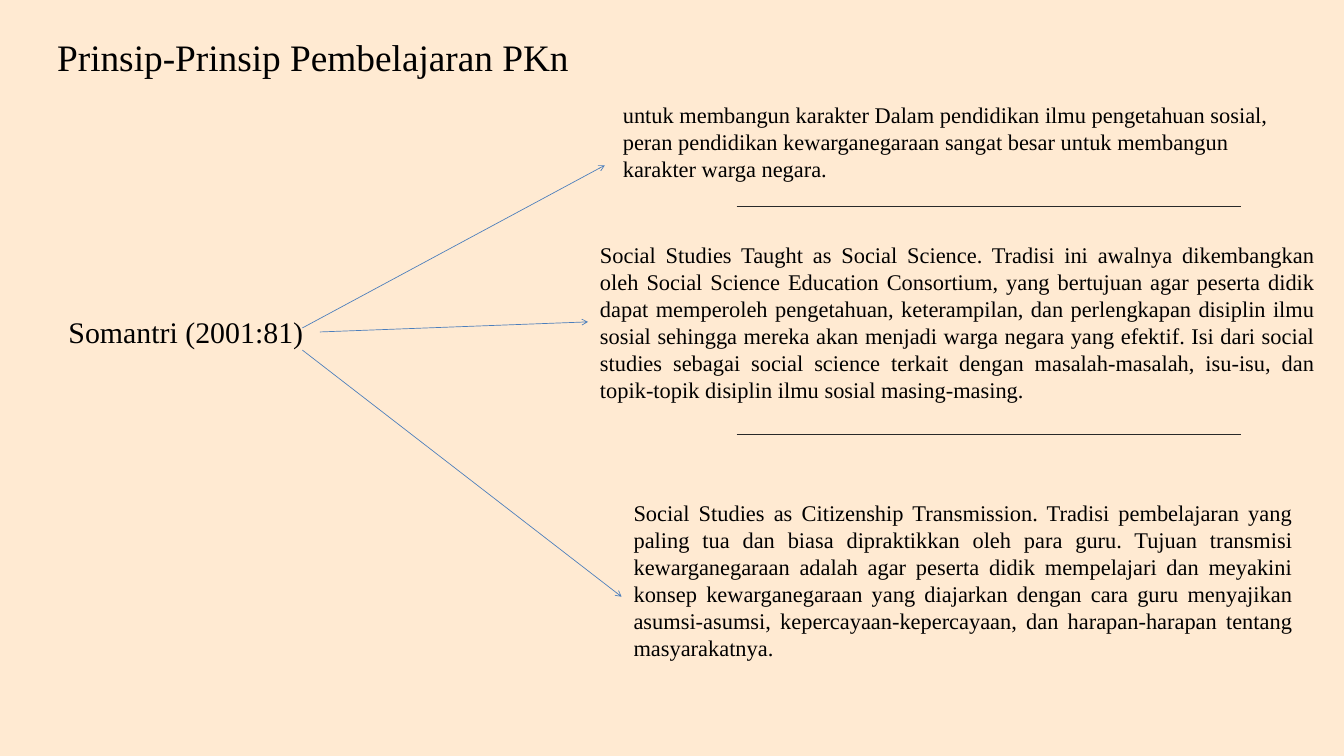
from dataclasses import dataclass

from lxml.etree import SubElement
from pptx import Presentation
from pptx.dml.color import RGBColor
from pptx.enum.shapes import MSO_CONNECTOR as Conn
from pptx.enum.text import MSO_ANCHOR as Anchor, MSO_AUTO_SIZE as Auto, PP_ALIGN as Align
from pptx.oxml.ns import qn
from pptx.util import Emu, Pt


@dataclass(frozen=True)
class Theme:
    """Colours, font and type sizes of the slide."""
    paper: str = "FFEAD2"
    ink: str = "000000"
    rule: str = "292929"
    arrow: str = "4B7EBC"
    font: str = "Times New Roman"
    title: int = 40
    source: int = 32
    body: int = 24


THEME = Theme()
PX = 9144
WIDTH, HEIGHT = 2000, 1125

TITLE = "Prinsip-Prinsip Pembelajaran PKn"
SOURCE = "Somantri (2001:81)"
PRINCIPLES = [
    ((917, 146, 1000, 131), Align.LEFT,
     "untuk membangun karakter Dalam pendidikan ilmu pengetahuan sosial, peran "
     "pendidikan kewarganegaraan sangat besar untuk membangun karakter warga negara."),
    ((883, 354, 1083, 252), Align.JUSTIFY,
     "Social Studies Taught as Social Science. Tradisi ini awalnya dikembangkan oleh "
     "Social Science Education Consortium, yang bertujuan agar peserta didik dapat "
     "memperoleh pengetahuan, keterampilan, dan perlengkapan disiplin ilmu sosial "
     "sehingga mereka akan menjadi warga negara yang efektif. Isi dari social studies "
     "sebagai social science terkait dengan masalah-masalah, isu-isu, dan topik-topik "
     "disiplin ilmu sosial masing-masing."),
    ((933, 738, 1000, 252), Align.JUSTIFY,
     "Social Studies as Citizenship Transmission. Tradisi pembelajaran yang paling tua "
     "dan biasa dipraktikkan oleh para guru. Tujuan transmisi kewarganegaraan adalah "
     "agar peserta didik mempelajari dan meyakini konsep kewarganegaraan yang diajarkan "
     "dengan cara guru menyajikan asumsi-asumsi, kepercayaan-kepercayaan, dan "
     "harapan-harapan tentang masyarakatnya."),
]


def px(*values):
    """Turn px lengths into EMU."""
    return [Emu(v * PX) for v in values]


def set_all(obj, values):
    """Set each named attribute of an object."""
    for name, value in values.items():
        setattr(obj, name, value)


def write(s, text, size, align=Align.LEFT, wrap=True):
    """Fill a shape with one formatted paragraph."""
    tf = s.text_frame
    set_all(tf, {"word_wrap": wrap, "auto_size": Auto.NONE, "vertical_anchor": Anchor.TOP})
    p = tf.paragraphs[0]
    set_all(p, {"alignment": align, "line_spacing": 1.0})
    r = p.add_run()
    r.text = text
    set_all(r.font, {"name": THEME.font, "size": Pt(size)})
    r.font.color.rgb = RGBColor.from_string(THEME.ink)


def add_line(slide, start, end, color, width, arrow=False):
    """Draw a straight line, with an open arrowhead at its end if asked."""
    s = slide.shapes.add_connector(Conn.STRAIGHT, *px(*start, *end))
    s.line.color.rgb = RGBColor.from_string(color)
    s.line.width = Pt(width)
    if arrow:
        SubElement(s.line._get_or_add_ln(), qn("a:tailEnd"), type="arrow")
    SubElement(s._element.spPr, qn("a:effectLst"))


def add_title(slide, box):
    """Place the slide title in its placeholder."""
    s = slide.shapes.title
    set_all(s, dict(zip(("left", "top", "width", "height"), px(*box))))
    write(s, TITLE, THEME.title, wrap=False)


def add_source(slide, box):
    """Place the cited author and the arrows that fan out to the principles."""
    x, y, w, h = box
    write(slide.shapes.add_textbox(*px(*box)), SOURCE, THEME.source, wrap=False)
    fan = [
        ((w - 26, 26), (w + 424, -216)),
        ((w, 32), (w + 399, 17)),
        ((w - 26, 59), (w + 449, 426)),
    ]
    for (x1, y1), (x2, y2) in fan:
        add_line(slide, (x + x1, y + y1), (x + x2, y + y2), THEME.arrow, 0.75, arrow=True)


def add_principles(slide, box):
    """Place the principle texts and the rules at the box's top and bottom."""
    x, y, w, h = box
    for rule_y in (y, y + h):
        add_line(slide, (x, rule_y), (x + w, rule_y), THEME.rule, 1)
    for place, align, text in PRINCIPLES:
        write(slide.shapes.add_textbox(*px(*place)), text, THEME.body, align)


def main():
    """Build the slide and save it."""
    prs = Presentation()
    prs.slide_width, prs.slide_height = px(WIDTH, HEIGHT)
    slide = prs.slides.add_slide(prs.slide_layouts[5])
    fill = slide.background.fill
    fill.solid()
    fill.fore_color.rgb = RGBColor.from_string(THEME.paper)
    add_title(slide, (75, 46, 790, 77))
    add_principles(slide, (1096, 307, 751, 340))
    add_source(slide, (92, 462, 384, 64))
    prs.save("out.pptx")


if __name__ == "__main__":
    main()
